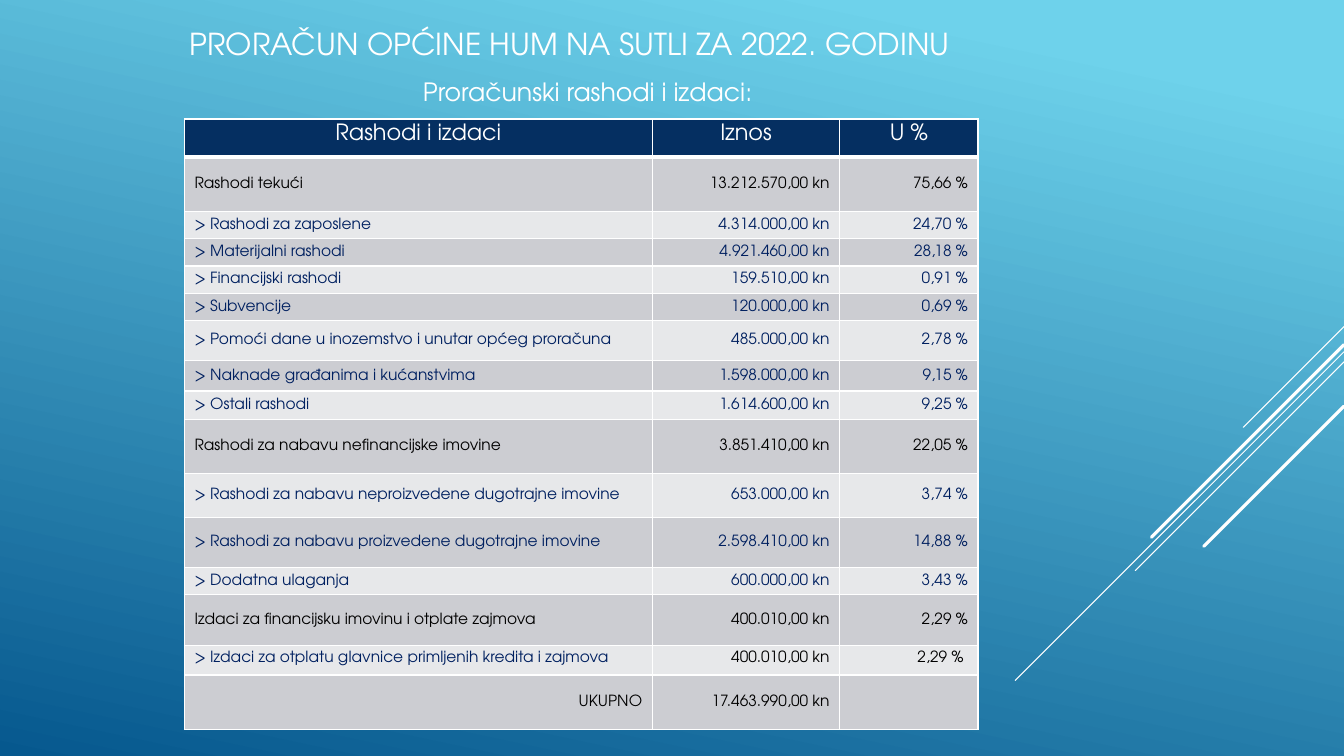
import pptx
import pptx.util
import pptx.oxml
import pptx.dml.color
import pptx.enum.text
import pptx.enum.shapes

Inches, Pt = pptx.util.Inches, pptx.util.Pt
RGBColor = pptx.dml.color.RGBColor
Align, Anchor = pptx.enum.text.PP_ALIGN, pptx.enum.text.MSO_ANCHOR

# Content
TITLE = "PRORAČUN OPĆINE HUM NA SUTLI ZA 2022. GODINU"
SUBTITLE = "Proračunski rashodi i izdaci:"
HEADER = ("Rashodi i izdaci", "Iznos", "U %")
BUDGET = [  # item, amount, share, row height
    ("Rashodi tekući", "13.212.570,00 kn", "75,66 %", 0.54),
    ("> Rashodi za zaposlene", "4.314.000,00 kn", "24,70 %", 0.27),
    ("> Materijalni rashodi", "4.921.460,00 kn", "28,18 %", 0.27),
    ("> Financijski rashodi", "159.510,00 kn", "0,91 %", 0.27),
    ("> Subvencije", "120.000,00 kn", "0,69 %", 0.27),
    ("> Pomoći dane u inozemstvo i unutar općeg proračuna", "485.000,00 kn", "2,78 %", 0.4),
    ("> Naknade građanima i kućanstvima", "1.598.000,00 kn", "9,15 %", 0.3),
    ("> Ostali rashodi", "1.614.600,00 kn", "9,25 %", 0.28),
    ("Rashodi za nabavu nefinancijske imovine", "3.851.410,00 kn", "22,05 %", 0.54),
    ("> Rashodi za nabavu neproizvedene dugotrajne imovine", "653.000,00 kn", "3,74 %", 0.44),
    ("> Rashodi za nabavu proizvedene dugotrajne imovine", "2.598.410,00 kn", "14,88 %", 0.49),
    ("> Dodatna ulaganja", "600.000,00 kn", "3,43 %", 0.27),
    ("Izdaci za financijsku imovinu i otplate zajmova", "400.010,00 kn", "2,29 %", 0.51),
    ("> Izdaci za otplatu glavnice primljenih kredita i zajmova", "400.010,00 kn", "2,29 % ", 0.29),
    ("UKUPNO", "17.463.990,00 kn", "", 0.54),
]
LOAN_ROW, TOTAL_ROW = len(BUDGET) - 1, len(BUDGET)
COLUMN_WIDTHS = (4.64, 1.86, 1.37)
HEADER_HEIGHT = 0.38
TOP_MARGIN = 0.05  # keeps top-anchored text inside its row
# Diagonal rays leave the right edge at 45 degrees: start height, run, line width
RAYS = [(3.24, 1.0, 0.75), (3.49, 3.26, 0.75), (3.59, 2.07, 0.75),
        (3.42, 1.91, 2.25), (4.03, 1.39, 2.25)]

# Look
FONT = "TeX Gyre Adventor"
WHITE, BLACK = RGBColor(255, 255, 255), RGBColor(0, 0, 0)
NAVY, HEADER_BLUE = RGBColor(0x00, 0x20, 0x60), RGBColor(0x05, 0x2F, 0x61)
BANDS = (RGBColor(0xE7, 0xE8, 0xEA), RGBColor(0xCC, 0xCD, 0xD2))
SKY, DEEP = RGBColor(0x6E, 0xD2, 0xEB), RGBColor(0x06, 0x58, 0x8E)
NS = 'xmlns:a="http://schemas.openxmlformats.org/drawingml/2006/main"'


def write(frame, text, align, size, color):
    para = frame.paragraphs[0]
    para.alignment = align
    span = para.add_run()
    span.text = text
    for name, value in {"name": FONT, "size": Pt(size)}.items():
        setattr(span.font, name, value)
    span.font.color.rgb = color


def add_text(page, area, text, align, anchor, size):
    box = page.shapes.add_textbox(*(Inches(length) for length in area))
    for name, value in {"word_wrap": True, "vertical_anchor": anchor}.items():
        setattr(box.text_frame, name, value)
    write(box.text_frame, text, align, size, WHITE)


def add_borders(cell, top, bottom):
    for side, width in {"L": 1, "R": 1, "T": top, "B": bottom}.items():
        cell._tc.get_or_add_tcPr().append(pptx.oxml.parse_xml(
            f'<a:ln{side} {NS} w="{Pt(width)}"><a:solidFill>'
            f'<a:srgbClr val="{WHITE}"/></a:solidFill></a:ln{side}>'))


def cell_format(row, column):
    """Return alignment, size, text colour and fill for a table cell."""
    if row == 0:
        return Align.CENTER, 16, WHITE, HEADER_BLUE
    is_detail = BUDGET[row - 1][0].startswith(">")
    is_blue = is_detail and (row != LOAN_ROW or column == 0)
    align = Align.LEFT if column == 0 and row != TOTAL_ROW else Align.RIGHT
    return align, 11, NAVY if is_blue else BLACK, BANDS[row % 2]


def add_background(page):
    fill = page.background.fill
    fill.gradient()
    fill.gradient_angle = 258
    for stop, (position, color) in zip(fill.gradient_stops, ((0.1, SKY), (1, DEEP))):
        stop.position = position
        stop.color.rgb = color


def add_rays(page):
    edge = 13.33
    for top, run, width in RAYS:
        ray = page.shapes.add_connector(
            pptx.enum.shapes.MSO_CONNECTOR.STRAIGHT, Inches(edge), Inches(top),
            Inches(edge - run), Inches(top + run))
        ray.line.color.rgb = WHITE
        ray.line.width = Pt(width)
        ray.line._get_or_add_ln().set("cap", "rnd")
        ray._element.spPr.append(pptx.oxml.parse_xml(f"<a:effectLst {NS}/>"))


def add_budget_table(page):
    heights = [HEADER_HEIGHT] + [entry[3] for entry in BUDGET]
    table = page.shapes.add_table(
        len(heights), len(HEADER), Inches(1.83), Inches(1.18),
        Inches(sum(COLUMN_WIDTHS)), Inches(sum(heights))).table
    for column, width in zip(table.columns, COLUMN_WIDTHS):
        column.width = Inches(width)
    for row, (height, texts) in enumerate(zip(heights, [HEADER] + BUDGET)):
        table.rows[row].height = Inches(height)
        at_top = row in (0, LOAN_ROW)
        layout = {"margin_top": Inches(TOP_MARGIN) if at_top else 0,
                  "margin_bottom": 0,
                  "vertical_anchor": Anchor.TOP if at_top else Anchor.MIDDLE}
        for column, text in enumerate(texts[:3]):
            cell = table.cell(row, column)
            align, size, color, fill = cell_format(row, column)
            for name, value in layout.items():
                setattr(cell, name, value)
            add_borders(cell, 3 if row == 1 else 1, 3 if row == 0 else 1)
            cell.fill.solid()
            cell.fill.fore_color.rgb = fill
            write(cell.text_frame, text, align, size, color)


def main():
    deck = pptx.Presentation()
    deck.slide_width, deck.slide_height = Inches(13.33), Inches(7.5)
    page = deck.slides.add_slide(deck.slide_layouts[6])
    add_background(page)
    add_rays(page)
    add_text(page, (1.01, 0.17, 9.28, 0.53), TITLE, Align.CENTER, Anchor.MIDDLE, 21.6)
    add_text(page, (2.47, 0.48, 5.09, 0.63), SUBTITLE, Align.RIGHT, Anchor.BOTTOM, 18)
    add_budget_table(page)
    deck.save("out.pptx")


if __name__ == "__main__":
    main()
